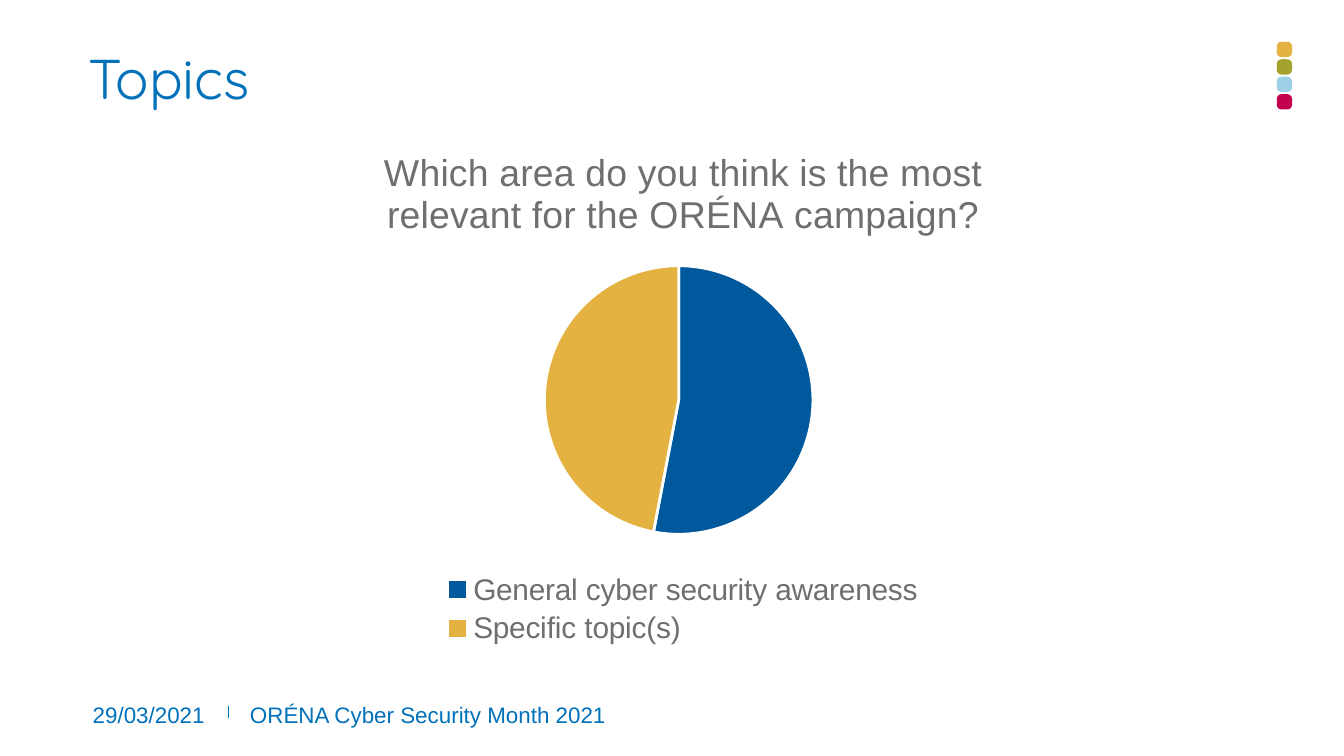
from pptx import Presentation
from pptx.chart.data import CategoryChartData
from pptx.dml.color import RGBColor
from pptx.enum.chart import XL_CHART_TYPE, XL_LEGEND_POSITION
from pptx.enum.shapes import MSO_CONNECTOR, MSO_SHAPE
from pptx.enum.text import MSO_ANCHOR
from pptx.oxml import parse_xml
from pptx.oxml.ns import nsdecls
from pptx.oxml.xmlchemy import OxmlElement
from pptx.util import Pt

COLORS = {"blue": "0071BA", "navy": "00599C", "gold": "E3B240", "olive": "A5A32E",
          "sky": "9DD1E7", "crimson": "C3004D", "grey": "706F6F", "white": "FFFFFF"}

# text, box (left, top, width, height), font format, line spacing, anchor
FOOTER = {"name": "Arial", "size": Pt(12)}
TEXTS = [
    ("Topics", (47.5, 27.4, 620.6, 55.4), {"name": "Quicksand", "size": Pt(30)}, 0.9, MSO_ANCHOR.TOP),
    ("29/03/2021", (49.7, 375.1, 67.7, 15.1), FOOTER, 1.0, MSO_ANCHOR.BOTTOM),
    ("ORÉNA Cyber Security Month 2021", (133.9, 375.1, 243.4, 15.1), FOOTER, 1.0, MSO_ANCHOR.BOTTOM),
]
DOTS = ["gold", "olive", "sky", "crimson"]
DOT_LEFT, DOT_TOP, DOT_SIZE, DOT_STEP = 684, 22.4, 8.2, 9.35
DIVIDER = (122.4, 378, 122.4, 384.5)

CHART_BOX = (116.6, 66.2, 499, 282.2)
CHART_TITLE = "Which area do you think is the most relevant for the ORÉNA campaign?"
SLICES = [("General cyber security awareness", 53, "navy"), ("Specific topic(s)", 47, "gold")]
PIE_AREA = {"x": 0.35, "y": 0.27, "w": 0.29, "h": 0.51}  # fractions of the chart


def rgb(name):
    return RGBColor.from_string(COLORS[name])


def set_font(font, color, values):
    for key, value in values.items():
        setattr(font, key, value)
    font.color.rgb = rgb(color)


def add_text(s, text, box, font, spacing, anchor):
    tf = s.shapes.add_textbox(*map(Pt, box)).text_frame
    for key in ("margin_left", "margin_top", "margin_right", "margin_bottom"):
        setattr(tf, key, 0)
    tf.word_wrap = True
    tf.vertical_anchor = anchor
    p = tf.paragraphs[0]
    p.line_spacing = spacing
    r = p.add_run()
    r.text = text
    set_font(r.font, "blue", font)


def add_dots(s):
    for i, color in enumerate(DOTS):
        sp = s.shapes.add_shape(MSO_SHAPE.ROUNDED_RECTANGLE, Pt(DOT_LEFT),
                                Pt(DOT_TOP + i * DOT_STEP), Pt(DOT_SIZE), Pt(DOT_SIZE))
        sp.adjustments[0] = 0.3
        sp.shadow.inherit = False
        sp.fill.solid()
        sp.fill.fore_color.rgb = rgb(color)
        sp.line.fill.background()


def add_divider(s):
    line = s.shapes.add_connector(MSO_CONNECTOR.STRAIGHT, *map(Pt, DIVIDER))
    line.line.color.rgb = rgb("blue")
    line.line.width = Pt(1)
    line._element.spPr.append(OxmlElement("a:effectLst"))


def place_plot(chart):
    """Fix the inner plot area at PIE_AREA."""
    plot_area = chart._chartSpace.chart.plotArea
    for old in plot_area.findall("{*}layout"):
        plot_area.remove(old)
    modes = '<c:layoutTarget val="inner"/><c:xMode val="edge"/><c:yMode val="edge"/>'
    sides = "".join(f'<c:{key} val="{value}"/>' for key, value in PIE_AREA.items())
    plot_area.insert(0, parse_xml(
        f'<c:layout {nsdecls("c")}><c:manualLayout>{modes}{sides}</c:manualLayout></c:layout>'))


def add_pie(s):
    labels, values, colors = zip(*SLICES)
    data = CategoryChartData()
    data.categories = labels
    data.add_series("Series 1", values)
    chart = s.shapes.add_chart(XL_CHART_TYPE.PIE, *map(Pt, CHART_BOX), data).chart
    set_font(chart.font, "grey", {"name": "Arial", "size": Pt(10)})

    chart.has_title = True
    p = chart.chart_title.text_frame.paragraphs[0]
    r = p.add_run()
    r.text = CHART_TITLE
    set_font(r.font, "grey", {"name": "Arial", "size": Pt(20), "bold": False})
    chart.chart_title.include_in_layout = False

    chart.has_legend = True
    chart.legend.position = XL_LEGEND_POSITION.BOTTOM
    chart.legend.include_in_layout = False
    set_font(chart.legend.font, "grey", {"name": "Arial", "size": Pt(16)})

    plot = chart.plots[0]
    plot.vary_by_categories = True
    for i, color in enumerate(colors):
        fmt = plot.series[0].points[i].format
        fmt.fill.solid()
        fmt.fill.fore_color.rgb = rgb(color)
        fmt.line.color.rgb = rgb("white")
        fmt.line.width = Pt(1.5)
    place_plot(chart)


prs = Presentation()
prs.slide_width, prs.slide_height = Pt(720), Pt(405)
s = prs.slides.add_slide(prs.slide_layouts[6])
add_divider(s)
add_dots(s)
for item in TEXTS:
    add_text(s, *item)
add_pie(s)
prs.save("out.pptx")
